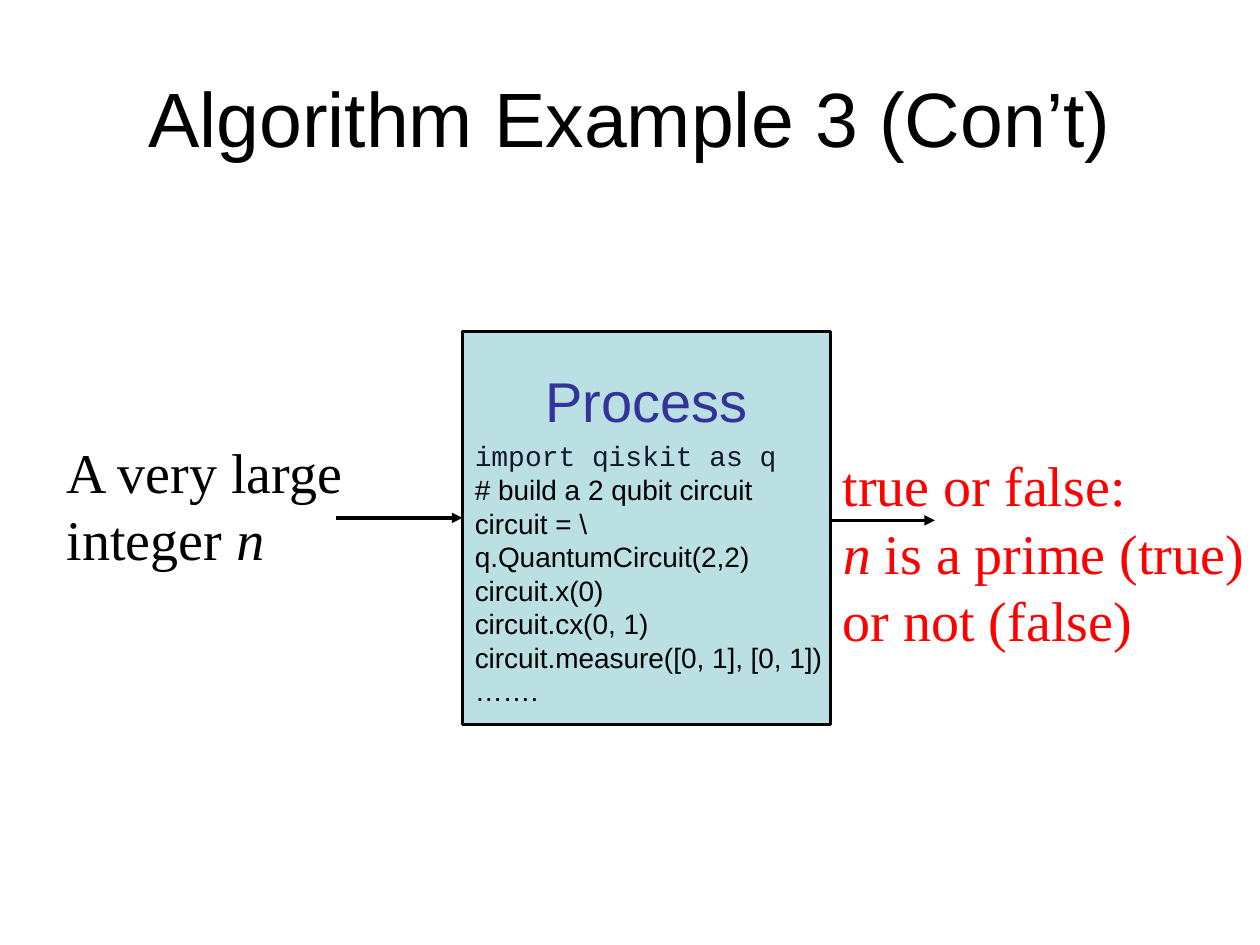
from lxml import etree
from pptx import Presentation
from pptx.dml.color import RGBColor
from pptx.enum.shapes import MSO_CONNECTOR, MSO_SHAPE
from pptx.enum.text import MSO_ANCHOR, PP_ALIGN
from pptx.oxml.ns import qn
from pptx.util import Inches, Pt

CENTER, LEFT = PP_ALIGN.CENTER, PP_ALIGN.LEFT
TOP, MIDDLE = MSO_ANCHOR.TOP, MSO_ANCHOR.MIDDLE
WIDTH, HEIGHT = 10, 7.5
LINE_WIDTH = Pt(2)
SANS, SERIF, MONO = "Arial", "Times New Roman", "Courier New"
COLORS = {
    "text": "000000",
    "heading": "333399",
    "answer": "FF0000",
    "import": "14182C",
    "box": "BBE0E3",
}

# Each paragraph is a list of (text, italic) runs.
TITLE = [[("Algorithm Example 3 (Con’t)", False)]]
HEADING = [[("Process", False)]]
INPUT = [[("A very large integer ", False), ("n", True)]]
OUTPUT = [
    [("true or false:", False)],
    [("n", True), (" is a prime (true) or not (false)", False)],
]
CODE = [[(line, False)] for line in (
    "import qiskit as q",
    "# build a 2 qubit circuit",
    "circuit = \\",
    "q.QuantumCircuit(2,2)",
    "circuit.x(0)",
    "circuit.cx(0, 1)",
    "circuit.measure([0, 1], [0, 1])",
    "…….",
)]

# Left, top, width, height in inches
BOX = (3.67, 2.63, 2.92, 3.12)
BOX_RIGHT = BOX[0] + BOX[2]
TEXT_TOP = 3.42
HEADING_INSET = 0.28
ARROWS = [(BOX[0] - 1, BOX[0], 4.11), (BOX_RIGHT, 7.42, 4.13)]


def color(name):
    return RGBColor.from_string(COLORS[name])


def style(paragraph, size, font, color_name):
    paragraph.font.size = Pt(size)
    paragraph.font.name = font
    paragraph.font.color.rgb = color(color_name)


def fill_text(shape, paragraphs, size, font, color_name, align=LEFT, anchor=TOP):
    frame = shape.text_frame
    frame.word_wrap = True
    frame.vertical_anchor = anchor
    for index, runs in enumerate(paragraphs):
        paragraph = frame.add_paragraph() if index else frame.paragraphs[0]
        paragraph.alignment = align
        style(paragraph, size, font, color_name)
        for text, italic in runs:
            run = paragraph.add_run()
            run.text = text
            if italic:
                run.font.italic = True
    return frame


def add_text(slide, area, *text, **options):
    shape = slide.shapes.add_textbox(*map(Inches, area))
    return fill_text(shape, *text, **options)


def add_process_box(slide):
    box = slide.shapes.add_shape(MSO_SHAPE.RECTANGLE, *map(Inches, BOX))
    box.shadow.inherit = False
    box.fill.solid()
    box.fill.fore_color.rgb = color("box")
    box.line.color.rgb = color("text")
    box.line.width = LINE_WIDTH
    frame = fill_text(box, HEADING, 32, SANS, "heading", align=CENTER)
    frame.margin_top = Inches(HEADING_INSET)


def add_arrow(slide, start, end, y):
    arrow = slide.shapes.add_connector(
        MSO_CONNECTOR.STRAIGHT, Inches(start), Inches(y), Inches(end), Inches(y))
    arrow.line.color.rgb = color("text")
    arrow.line.width = LINE_WIDTH
    properties = arrow.element.spPr
    etree.SubElement(properties.find(qn("a:ln")), qn("a:tailEnd"), type="triangle")
    etree.SubElement(properties, qn("a:effectLst"))


def main():
    presentation = Presentation()
    presentation.slide_width = Inches(WIDTH)
    presentation.slide_height = Inches(HEIGHT)
    slide = presentation.slides.add_slide(presentation.slide_layouts[6])

    add_text(slide, (0.5, 0.3, WIDTH - 1, 1.25), TITLE, 44, SANS, "text",
             align=CENTER, anchor=MIDDLE)
    add_process_box(slide)
    for arrow in ARROWS:
        add_arrow(slide, *arrow)
    add_text(slide, (0.43, TEXT_TOP, 3.31, 1.18), INPUT, 32, SERIF, "text")
    add_text(slide, (BOX_RIGHT, 3.53, WIDTH - BOX_RIGHT, 1.72), OUTPUT, 32, SERIF, "answer")
    code = add_text(slide, (BOX[0], TEXT_TOP, 3.34, 2.26), CODE, 16, SANS, "text",
                    anchor=MIDDLE)
    style(code.paragraphs[0], 16, MONO, "import")

    presentation.save("out.pptx")


if __name__ == "__main__":
    main()
